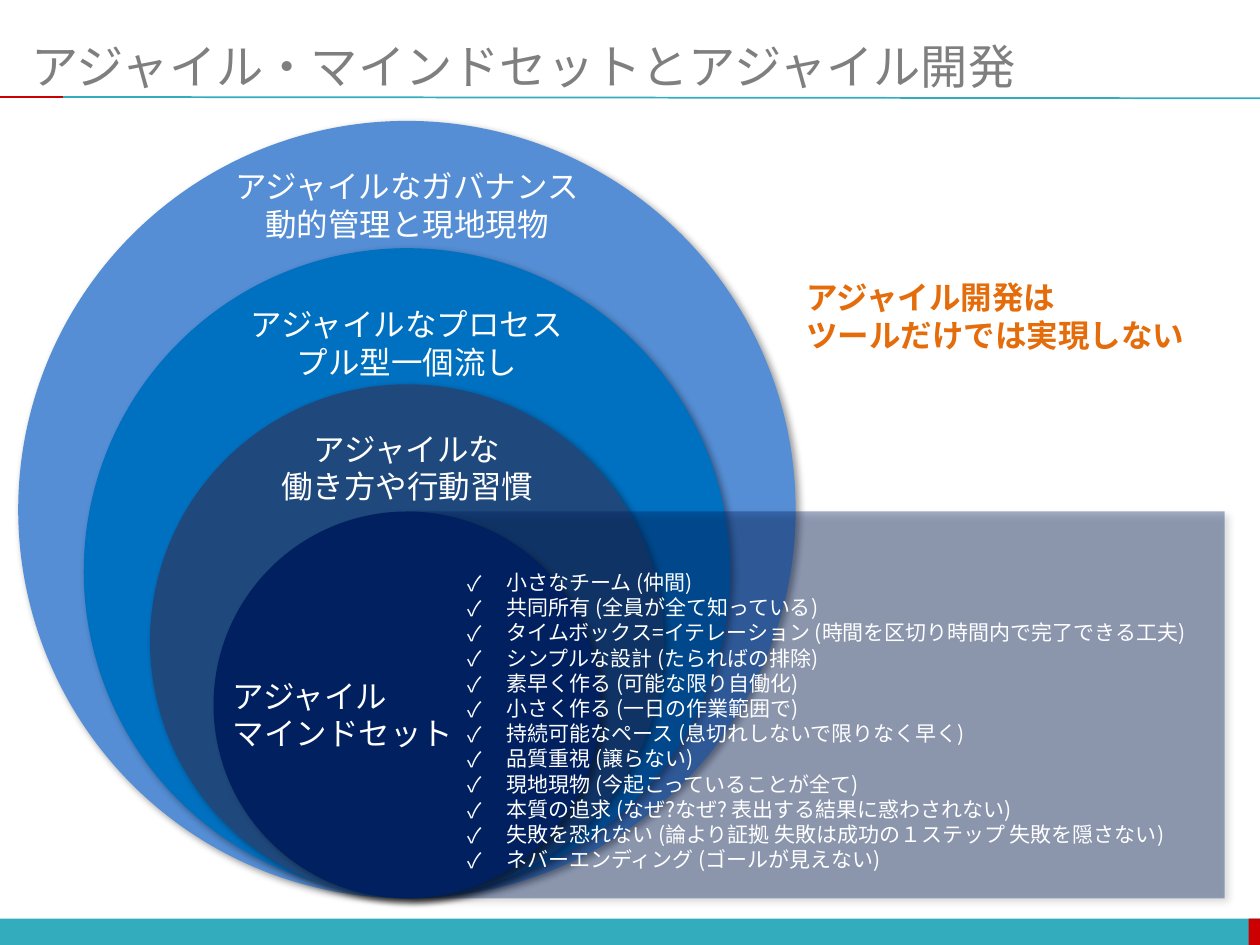
"""Build the slide on the agile mindset and agile development."""
from lxml.etree import SubElement
from pptx import Presentation
from pptx.dml.color import RGBColor
from pptx.enum.shapes import MSO_CONNECTOR, MSO_SHAPE
from pptx.enum.text import MSO_ANCHOR, MSO_AUTO_SIZE, PP_ALIGN
from pptx.oxml import parse_xml
from pptx.oxml.ns import nsdecls, qn
from pptx.util import Inches, Pt

FONT = "Noto Sans CJK JP"
WHITE, NAVY, TEAL, RED = "FFFFFF", "002060", "33ACBD", "CC0000"
COLUMNS, ROWS = 100, 75
SHADOW = (
    f'<a:effectLst {nsdecls("a")}><a:outerShdw blurRad="50800" dist="38100" dir="2700000" '
    'algn="tl" rotWithShape="0"><a:srgbClr val="000000"><a:alpha val="40000"/></a:srgbClr>'
    "</a:outerShdw></a:effectLst>"
)

prs = Presentation()
prs.slide_width, prs.slide_height = Inches(10), Inches(7.5)
slide = prs.slides.add_slide(prs.slide_layouts[1])
shapes = slide.shapes


def grid(*lengths):
    """Turn alternating columns and rows into slide lengths."""
    units = (prs.slide_width / COLUMNS, prs.slide_height / ROWS)
    return [round(length * units[i % 2]) for i, length in enumerate(lengths)]


def paint(color_format, code):
    """Colour a fill, line or font from a hex string."""
    color_format.rgb = RGBColor.from_string(code)


for left, width, code in [(0, 100, TEAL), (99.1, 0.9, RED)]:
    footer = shapes.add_shape(MSO_SHAPE.RECTANGLE, *grid(left, 72.9, width, 2.1))
    footer.shadow.inherit = False
    footer.fill.solid()
    paint(footer.fill.fore_color, code)
    footer.line.fill.background()

for start, end, end_row, code in [(5, 100, 7.8, TEAL), (0, 5, 7.7, RED)]:
    rule = shapes.add_connector(MSO_CONNECTOR.STRAIGHT, *grid(start, 7.7, end, end_row))
    rule.line.width = Pt(1)
    paint(rule.line.color, code)
    SubElement(rule._element.spPr, qn("a:effectLst"))

center, base = 32.3, 71.3
layers = [
    (MSO_SHAPE.OVAL, center - 30.85, base - 61.7, 61.7, 61.7, "558ED5"),
    (MSO_SHAPE.OVAL, center - 25.65, base - 51.6, 51.3, 51.3, "0070C0"),
    (MSO_SHAPE.OVAL, center - 20.4, base - 40.8, 40.8, 40.8, "1F497D"),
    (MSO_SHAPE.RECTANGLE, center, base - 30.7, 64.9, 30.7, NAVY),
    (MSO_SHAPE.OVAL, center - 15.35, base - 30.7, 30.7, 30.7, NAVY),
]
for preset, left, top, width, height, code in layers:
    layer = shapes.add_shape(preset, *grid(left, top, width, height))
    layer.fill.solid()
    paint(layer.fill.fore_color, code)
    layer.line.fill.background()
    layer._element.spPr.append(parse_xml(SHADOW))
    if preset == MSO_SHAPE.RECTANGLE:
        tint = layer._element.spPr.find(f".//{qn('a:solidFill')}/{qn('a:srgbClr')}")
        SubElement(tint, qn("a:alpha"), val="36000")

title, practices = shapes.title, slide.placeholders[1]
title.left, title.top, title.width, title.height = grid(2.5, 2.9, 95, 4.6)
title.text_frame.margin_left = title.text_frame.margin_right = 0
practices.left, practices.top, practices.width, practices.height = grid(36.1, 44.7, 61.1, 25.2)
shapes._spTree.append(practices._element)

practice_lines = [
    "小さなチーム (仲間)",
    "共同所有 (全員が全て知っている)",
    "タイムボックス=イテレーション (時間を区切り時間内で完了できる工夫)",
    "シンプルな設計 (たらればの排除)",
    "素早く作る (可能な限り自働化)",
    "小さく作る (一日の作業範囲で)",
    "持続可能なペース (息切れしないで限りなく早く)",
    "品質重視 (譲らない)",
    "現地現物 (今起こっていることが全て)",
    "本質の追求 (なぜ?なぜ? 表出する結果に惑わされない)",
    "失敗を恐れない (論より証拠 失敗は成功の１ステップ 失敗を隠さない)",
    "ネバーエンディング (ゴールが見えない)",
]
texts = [
    (title, ["アジャイル・マインドセットとアジャイル開発"], 27, "7F7F7F", PP_ALIGN.LEFT),
    (practices, practice_lines, 12, WHITE, PP_ALIGN.LEFT),
]

labels = [
    (17.5, 53.2, 19.7, ["アジャイル", "マインドセット"], WHITE, PP_ALIGN.LEFT),
    (center - 11.1, 33.6, 22.2, ["アジャイルな", "働き方や行動習慣"], WHITE, PP_ALIGN.CENTER),
    (center - 13.65, 23.7, 27.3, ["アジャイルなプロセス", "プル型一個流し"], WHITE, PP_ALIGN.CENTER),
    (center - 14.9, 12.8, 29.8, ["アジャイルなガバナンス", "動的管理と現地現物"], WHITE, PP_ALIGN.CENTER),
    (63, 21.6, 32.3, ["アジャイル開発は", "ツールだけでは実現しない"], "E46C0A", PP_ALIGN.LEFT),
]
for left, top, width, lines, code, align in labels:
    label = shapes.add_textbox(*grid(left, top, width, 7.1))
    texts.append((label, lines, 18, code, align))

for holder, lines, size, code, align in texts:
    frame = holder.text_frame
    frame.word_wrap = holder in (title, practices)
    frame.auto_size = MSO_AUTO_SIZE.NONE
    frame.vertical_anchor = MSO_ANCHOR.MIDDLE if holder is title else MSO_ANCHOR.TOP
    for index, line in enumerate(lines):
        paragraph = frame.paragraphs[0] if index == 0 else frame.add_paragraph()
        paragraph.alignment = align
        paragraph.line_spacing = Pt(1.2 * size)
        paragraph.space_before = Pt(0)
        if holder is practices:
            bullet = paragraph._p.get_or_add_pPr()
            bullet.set("marL", str(Inches(0.31)))
            bullet.set("indent", str(Inches(-0.31)))
            SubElement(bullet, qn("a:buFont"), typeface=FONT)
            SubElement(bullet, qn("a:buChar"), char="✓")
        run = paragraph.add_run()
        run.text = line
        run.font.size = Pt(size)
        run.font.bold = code == "E46C0A"
        run.font.name = FONT
        paint(run.font.color, code)
        SubElement(run._r.get_or_add_rPr(), qn("a:ea"), typeface=FONT)

prs.save("out.pptx")
